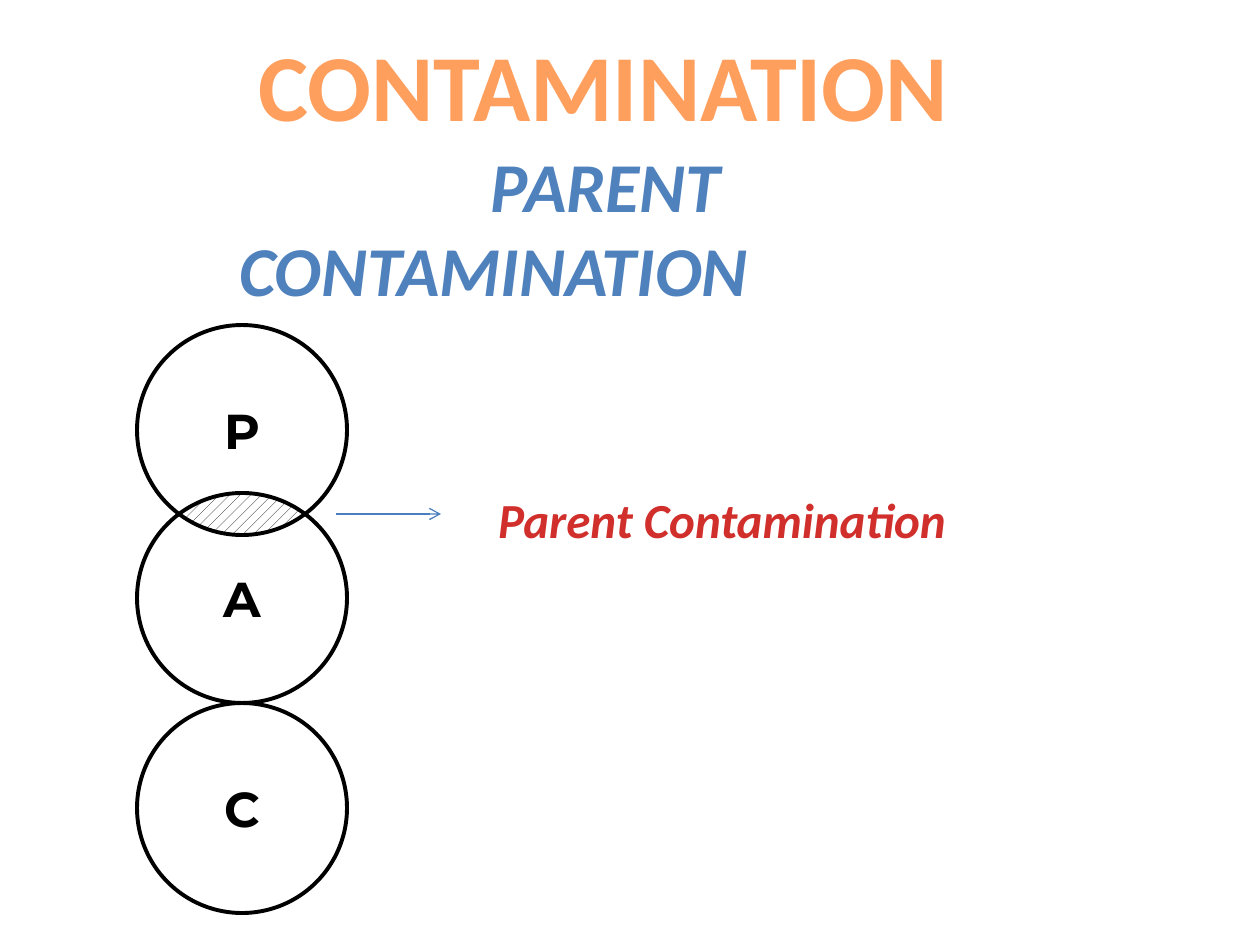
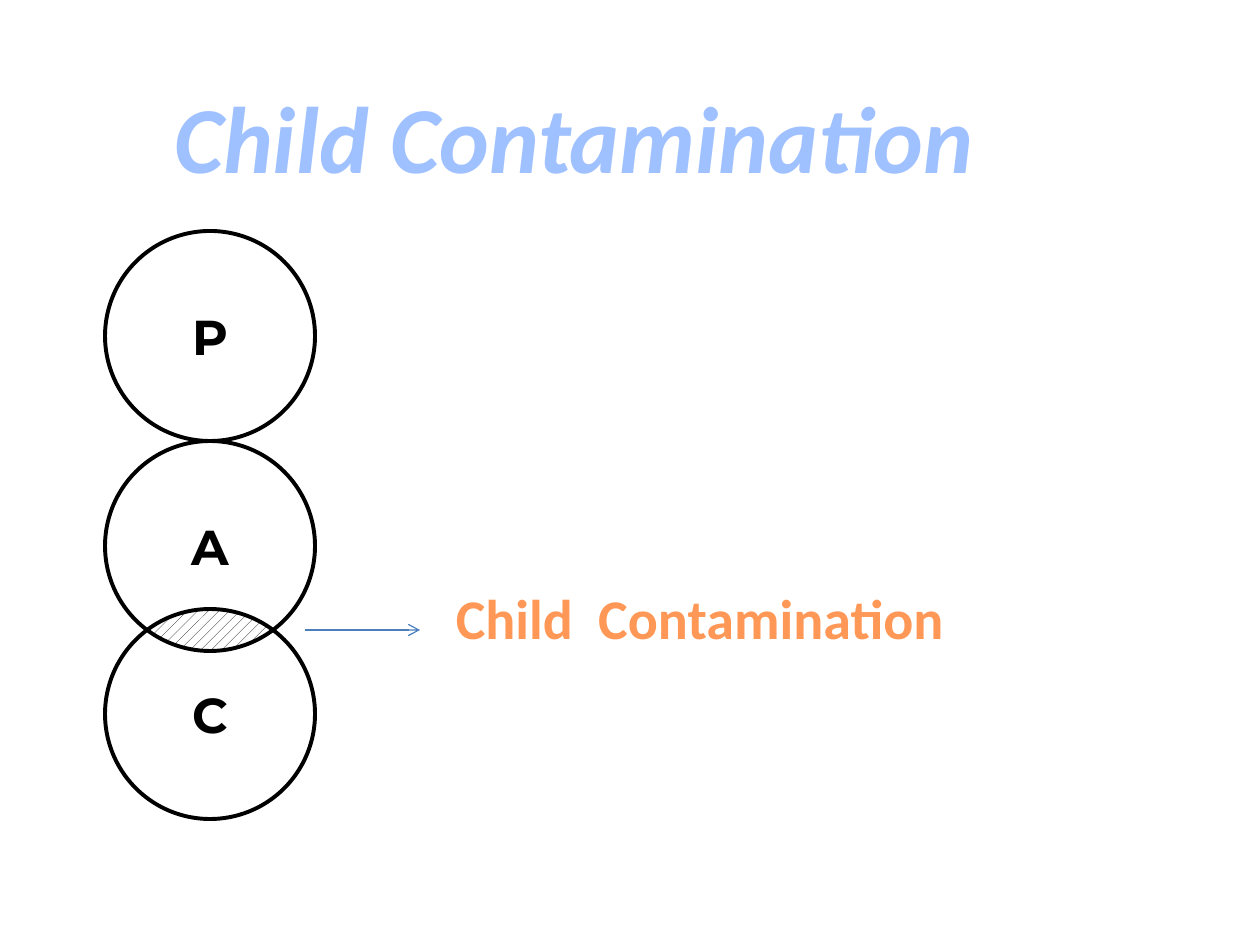
from dataclasses import dataclass
from math import asin, cos, pi, sin

from lxml.etree import SubElement
from pptx import Presentation
from pptx.dml.color import RGBColor
from pptx.enum.dml import MSO_PATTERN
from pptx.enum.shapes import MSO_CONNECTOR, MSO_SHAPE
from pptx.enum.text import MSO_ANCHOR, MSO_AUTO_SIZE, PP_ALIGN
from pptx.oxml.ns import qn
from pptx.util import Emu, Pt

EMU_PER_PX = 914400 / 126
SLIDE_SIZE = (1260, 945)
DIAMETER = 210
OVERLAP = 42
ARC_STEPS = 12


@dataclass(frozen=True)
class Theme:
    text_font: str = "Calibri"
    letter_font: str = "Montserrat"
    title_size: int = 54
    subtitle_size: int = 40
    letter_size: int = 28
    black: str = "000000"
    white: str = "FFFFFF"
    orange: str = "FF9F5D"
    label_orange: str = "FF9856"
    red: str = "D02F2C"
    blue: str = "4F81BD"
    light_blue: str = "A0C1FF"
    arrow_blue: str = "4B7EBC"
    circle_line: float = 2.25
    arrow_line: float = 0.75


THEME = Theme()

SLIDES = [
    {
        "title": {"text": "CONTAMINATION", "box": (242, 21, 723, 127), "color": THEME.orange},
        "subtitle": {"text": "PARENT\vCONTAMINATION", "box": (0, 136, 987, 183),
                     "color": THEME.blue, "size": THEME.subtitle_size, "italic": True,
                     "first_indent": 224},
        "label": {"text": "Parent Contamination", "box": (483, 483, 478, 72),
                  "color": THEME.red, "size": 28, "italic": True},
        "circles": (137, 325),
        "overlapping": "PA",
        "arrow": (336, 441),
    },
    {
        "title": {"text": "Child Contamination", "box": (157, 73, 834, 127),
                  "color": THEME.light_blue, "italic": True},
        "label": {"text": "Child  Contamination", "box": (441, 577, 518, 81),
                  "color": THEME.label_orange, "size": 32},
        "circles": (105, 231),
        "overlapping": "AC",
        "arrow": (305, 420),
    },
]


def px(value):
    return Emu(round(value * EMU_PER_PX))


def rgb(color):
    return RGBColor.from_string(color)


def write_text(shape, text, *, color, size=THEME.title_size, font=THEME.text_font,
               italic=False, anchor=MSO_ANCHOR.TOP, wrap=False, before=0, first_indent=0):
    frame = shape.text_frame
    frame.text = text
    frame.auto_size = MSO_AUTO_SIZE.NONE
    frame.word_wrap = wrap
    frame.vertical_anchor = anchor
    paragraph = frame.paragraphs[0]
    paragraph.alignment = PP_ALIGN.CENTER
    paragraph.space_before = Pt(before)
    if first_indent:
        paragraph._p.get_or_add_pPr().set("indent", str(px(first_indent)))
    for run in paragraph.runs:
        run.font.name = font
        run.font.size = Pt(size)
        run.font.bold = True
        run.font.italic = italic
        run.font.color.rgb = rgb(color)


def set_title(slide, text, box, **text_format):
    title = slide.shapes.title
    title.left, title.top, title.width, title.height = map(px, box)
    write_text(title, text, **text_format)


def add_text(slide, text, box, **text_format):
    write_text(slide.shapes.add_textbox(*map(px, box)), text, **text_format)


def add_circle(slide, letter, left, top):
    circle = slide.shapes.add_shape(
        MSO_SHAPE.OVAL, px(left), px(top), px(DIAMETER), px(DIAMETER))
    circle.shadow.inherit = False
    circle.fill.background()
    circle.line.color.rgb = rgb(THEME.black)
    circle.line.width = Pt(THEME.circle_line)
    write_text(circle, letter, color=THEME.black, size=THEME.letter_size,
               font=THEME.letter_font, anchor=MSO_ANCHOR.MIDDLE, before=THEME.letter_size * 0.2)


def add_overlap(slide, center_x, center_y):
    radius = DIAMETER / 2
    offset = radius - OVERLAP / 2
    half_angle = pi / 2 - asin(offset / radius)
    points = []
    for side in (-1, 1):
        for step in range(ARC_STEPS):
            angle = half_angle * (2 * step / ARC_STEPS - 1)
            points.append((px(center_x - side * radius * sin(angle)),
                           px(center_y - side * (offset - radius * cos(angle)))))
    builder = slide.shapes.build_freeform(*points[0])
    builder.add_line_segments(points[1:], close=True)
    overlap = builder.convert_to_shape()
    overlap.shadow.inherit = False
    overlap.line.fill.background()
    overlap.fill.patterned()
    overlap.fill.pattern = MSO_PATTERN.PERCENT_20
    overlap.fill.fore_color.rgb = rgb(THEME.black)
    overlap.fill.back_color.rgb = rgb(THEME.white)


def add_arrow(slide, start_x, end_x, y):
    arrow = slide.shapes.add_connector(
        MSO_CONNECTOR.STRAIGHT, px(start_x), px(y), px(end_x), px(y))
    arrow.line.color.rgb = rgb(THEME.arrow_blue)
    arrow.line.width = Pt(THEME.arrow_line)
    SubElement(arrow.line._get_or_add_ln(), qn("a:tailEnd"), type="arrow")
    SubElement(arrow._element.spPr, qn("a:effectLst"))


def add_ego_states(slide, origin, overlapping, arrow):
    left, top = origin
    tops = {}
    for letter in "PAC":
        tops[letter] = top
        top += DIAMETER - (OVERLAP if letter == overlapping[0] else 0)
    overlap_y = tops[overlapping[1]] + OVERLAP / 2
    add_arrow(slide, *arrow, overlap_y)
    add_overlap(slide, left + DIAMETER / 2, overlap_y)
    for letter, circle_top in tops.items():
        add_circle(slide, letter, left, circle_top)


def main():
    presentation = Presentation()
    presentation.slide_width, presentation.slide_height = map(px, SLIDE_SIZE)
    title_only = presentation.slide_layouts.get_by_name("Title Only")
    for content in SLIDES:
        slide = presentation.slides.add_slide(title_only)
        set_title(slide, **content["title"])
        add_ego_states(slide, content["circles"], content["overlapping"], content["arrow"])
        for part in ("subtitle", "label"):
            if part in content:
                add_text(slide, **content[part])
    presentation.save("out.pptx")


if __name__ == "__main__":
    main()
